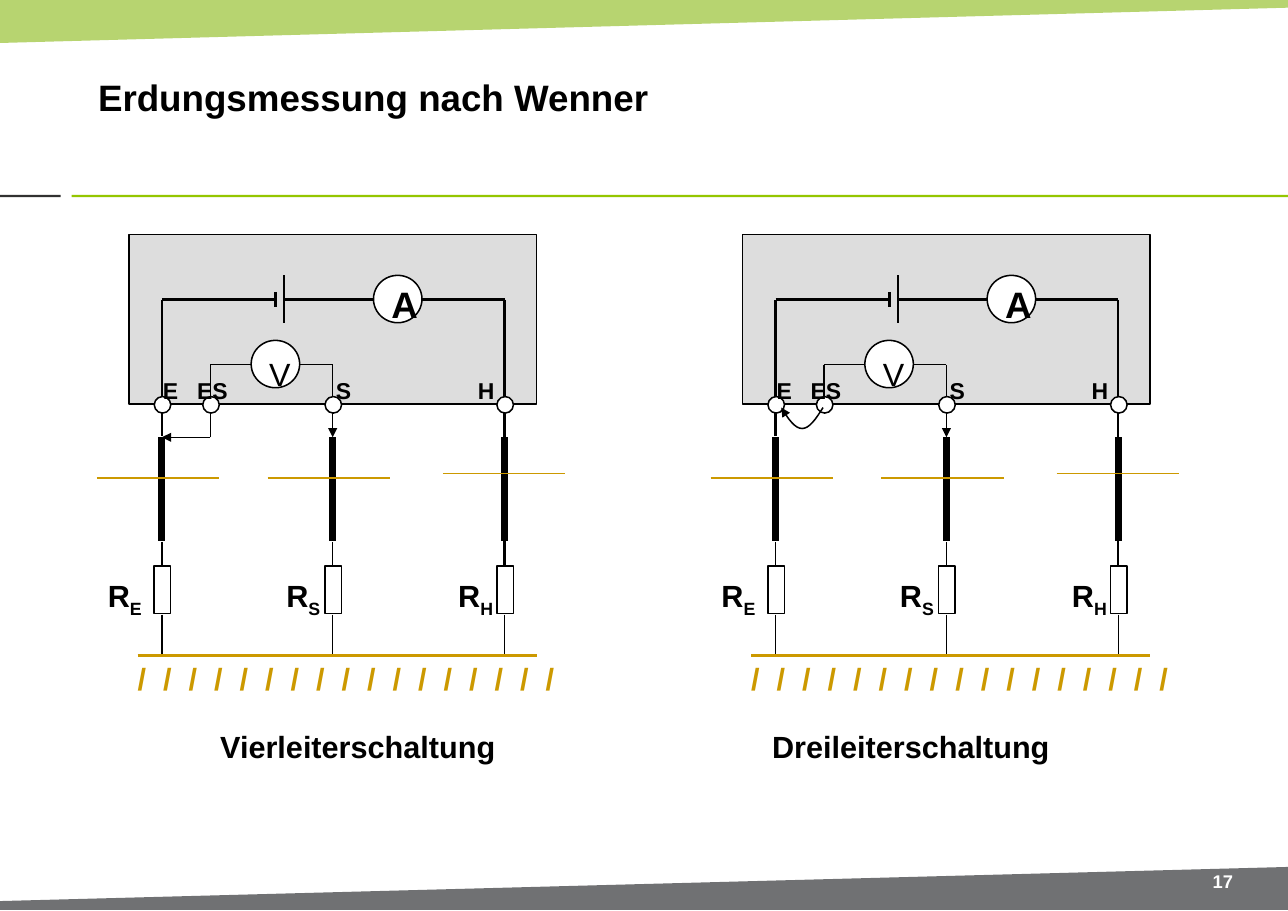
import math
from dataclasses import dataclass

from lxml import etree
from pptx import Presentation
from pptx.dml.color import RGBColor
from pptx.enum import shapes, text
from pptx.oxml import ns
from pptx.util import Inches, Pt


@dataclass(frozen=True)
class Theme:
    font: str = "Arial"
    black: str = "000000"
    white: str = "FFFFFF"
    case: str = "DDDDDD"
    earth: str = "CC9900"
    band: str = "95C02A"
    rule: str = "94C600"
    dark_rule: str = "313130"
    footer: str = "707173"
    title_size: int = 24
    meter_size: int = 21
    label_size: int = 20
    terminal_size: int = 15
    number_size: int = 12


theme = Theme()
RECT = shapes.MSO_SHAPE.RECTANGLE
OVAL = shapes.MSO_SHAPE.OVAL

presentation = Presentation()
presentation.slide_width = Inches(11.69)
presentation.slide_height = Inches(8.27)
slide = presentation.slides.add_slide(presentation.slide_layouts[5])


def add_line(x1, y1, x2, y2, width=1, color=theme.black, arrow=False):
    line = slide.shapes.add_connector(
        shapes.MSO_CONNECTOR.STRAIGHT, Inches(x1), Inches(y1), Inches(x2), Inches(y2))
    line.line.color.rgb = RGBColor.from_string(color)
    line.line.width = Pt(width)
    if arrow:
        etree.SubElement(line.line._get_or_add_ln(), ns.qn("a:tailEnd"), type="triangle")
    etree.SubElement(line._element.spPr, ns.qn("a:effectLst"))


def add_shape(kind, left, top, width, height, fill=theme.white, outlined=True):
    shape = slide.shapes.add_shape(
        kind, Inches(left), Inches(top), Inches(width), Inches(height))
    shape.shadow.inherit = False
    shape.fill.solid()
    shape.fill.fore_color.rgb = RGBColor.from_string(fill)
    if outlined:
        shape.line.color.rgb = RGBColor.from_string(theme.black)
        shape.line.width = Pt(1)
    else:
        shape.line.fill.background()
    return shape


# Slanted bands at the top and bottom
bands = [
    ([(0, 0), (11.69, 0), (11.69, 0.07), (0, 0.39)], theme.band),
    ([(0, 8.26), (0, 8.18), (11.69, 7.87), (11.69, 8.26)], theme.footer),
]
for corners, color in bands:
    points = [(Inches(x), Inches(y)) for x, y in corners]
    builder = slide.shapes.build_freeform(*points[0])
    builder.add_line_segments(points[1:], close=True)
    band = builder.convert_to_shape()
    band.shadow.inherit = False
    band.fill.solid()
    band.fill.fore_color.rgb = RGBColor.from_string(color)
    band.line.fill.background()
    if color == theme.band:
        color_element = band._element.spPr.find(".//" + ns.qn("a:srgbClr"))
        etree.SubElement(color_element, ns.qn("a:alpha"), val="67000")

# Rule under the title
add_shape(RECT, 0, 1.77, 0.55, 0.02, theme.dark_rule, outlined=False)
add_shape(RECT, 0.65, 1.77, 11.04, 0.02, theme.rule, outlined=False)

# Title
title = slide.shapes.title
title.left, title.top = Inches(0.78), Inches(0.28)
title.width, title.height = Inches(9.18), Inches(1.19)
title.text_frame.text = "Erdungsmessung nach Wenner"
title.text_frame.vertical_anchor = text.MSO_ANCHOR.MIDDLE
title.text_frame.margin_left = Inches(0.11)
paragraph = title.text_frame.paragraphs[0]
paragraph.alignment = text.PP_ALIGN.LEFT
paragraph.font.name = theme.font
paragraph.font.size = Pt(theme.title_size)
paragraph.font.bold = True
paragraph.font.color.rgb = RGBColor.from_string(theme.black)

# Two measuring circuits, drawn from the same rules
labels = []  # text, subscript, left, top, width, size
for panel, four_wire in ((0, True), (5.57, False)):
    earth_x, sense_x, probe_x, aux_x = (panel + x for x in (1.47, 1.91, 3.02, 4.58))
    battery_x = panel + 2.5

    # Instrument case and circuit wires
    add_shape(RECT, panel + 1.17, 2.13, 3.7, 1.54, theme.case)
    add_line(earth_x, 3.96, earth_x, 2.72, 1.5)
    add_line(earth_x, 2.72, battery_x, 2.72, 1.5)
    add_line(battery_x, 2.65, battery_x, 2.79, 2)
    add_line(battery_x + 0.08, 2.5, battery_x + 0.08, 2.93, 1.5)
    add_line(battery_x + 0.08, 2.72, aux_x, 2.72, 1.5)
    add_line(aux_x, 2.72, aux_x, 5.54, 1.5)
    add_line(sense_x, 3.31, probe_x, 3.31)
    add_line(probe_x, 3.31, probe_x, 3.97, arrow=True)
    add_line(sense_x, 3.31, sense_x, 3.97 if four_wire else 3.68)
    if four_wire:
        add_line(sense_x, 3.97, earth_x, 3.97, arrow=True)

    # Earth electrodes with their resistances
    electrodes = (("E", earth_x, 0.88, 0.88, 4.34), ("S", probe_x, 2.5, 2.43, 4.34),
                  ("H", aux_x, 4.06, 4.02, 4.3))
    for name, x, label_x, surface_x, surface_y in electrodes:
        add_line(x, 3.97, x, 4.91, 4.5)
        add_line(x, 4.92, x, 5.14)
        add_shape(RECT, x - 0.07, 5.14, 0.15, 0.43)
        add_line(x, 5.58, x, 5.95)
        add_line(panel + surface_x, surface_y, panel + surface_x + 1.11, surface_y,
                 color=theme.earth)
        labels.append(("R", name, panel + label_x, 5, 0.81, theme.label_size))
    add_line(panel + 1.25, 5.95, panel + 4.87, 5.95, 2, theme.earth)

    # Meters
    meters = (("V", 2.28, 3.09, theme.meter_size, False, 1.5),
              ("A", 3.39, 2.5, theme.title_size, True, 1.2))
    for letter, x, y, size, bold, spacing in meters:
        meter = add_shape(OVAL, panel + x, y, 0.44, 0.43)
        meter.text_frame.word_wrap = False
        meter.text_frame.text = letter
        paragraph = meter.text_frame.paragraphs[0]
        paragraph.line_spacing = spacing
        paragraph.font.name = theme.font
        paragraph.font.size = Pt(size)
        paragraph.font.bold = bold
        paragraph.font.color.rgb = RGBColor.from_string(theme.black)

    # Terminals
    terminals = (("E", earth_x, 1.38), ("ES", sense_x, 1.69),
                 ("S", probe_x, 2.95), ("H", aux_x, 4.24))
    for name, x, label_x in terminals:
        add_shape(OVAL, x - 0.07, 3.6, 0.15, 0.15)
        labels.append((name, "", panel + label_x, 3.24, 0.6, theme.terminal_size))

    # Curved jumper from ES to E
    if not four_wire:
        steps = 16
        points = [(Inches(panel + 1.9 - 0.38 * i / steps),
                   Inches(3.7 + 0.19 * math.sin(math.pi * i / steps)))
                  for i in range(steps + 1)]
        builder = slide.shapes.build_freeform(*points[0])
        builder.add_line_segments(points[1:], close=False)
        jumper = builder.convert_to_shape()
        jumper.shadow.inherit = False
        jumper.fill.background()
        jumper.line.color.rgb = RGBColor.from_string(theme.black)
        jumper.line.width = Pt(1)
        etree.SubElement(jumper.line._get_or_add_ln(), ns.qn("a:tailEnd"), type="triangle")

    # Hatching below the earth line
    hatching = slide.shapes.add_textbox(
        Inches(panel + 1.15), Inches(5.94), Inches(4.4), Inches(0.45))
    hatching.text_frame.word_wrap = True
    hatching.text_frame.text = "\t".join("/" * 17)
    paragraph = hatching.text_frame.paragraphs[0]
    tabs = etree.SubElement(paragraph._p.get_or_add_pPr(), ns.qn("a:tabLst"))
    for i in range(1, 17):
        etree.SubElement(tabs, ns.qn("a:tab"), pos=str(Inches(0.2315 * i)), algn="l")
    paragraph.font.name = theme.font
    paragraph.font.size = Pt(theme.label_size)
    paragraph.font.bold = True
    paragraph.font.color.rgb = RGBColor.from_string(theme.earth)

# Labels and captions
labels += [("Vierleiterschaltung", "", 1.9, 6.39, 3.2, theme.label_size),
           ("Dreileiterschaltung", "", 6.91, 6.39, 3.2, theme.label_size),
           ("17", "", 10.51, 7.86, 1.18, theme.number_size)]
for wording, subscript, left, top, width, size in labels:
    is_number = size == theme.number_size
    box = slide.shapes.add_textbox(
        Inches(left), Inches(top), Inches(width), Inches(0.28 if is_number else 0.55))
    box.text_frame.word_wrap = True
    box.text_frame.text = wording
    paragraph = box.text_frame.paragraphs[0]
    if subscript:
        run = paragraph.add_run()
        run.text = subscript
        run.font._element.set("baseline", "-25000")
    if is_number:
        box.text_frame.vertical_anchor = text.MSO_ANCHOR.MIDDLE
        paragraph.alignment = text.PP_ALIGN.CENTER
    else:
        paragraph.line_spacing = 1.5
    for run in paragraph.runs:
        run.font.name = theme.font
        run.font.size = Pt(size)
        run.font.bold = True
        run.font.color.rgb = RGBColor.from_string(theme.white if is_number else theme.black)

presentation.save("out.pptx")
